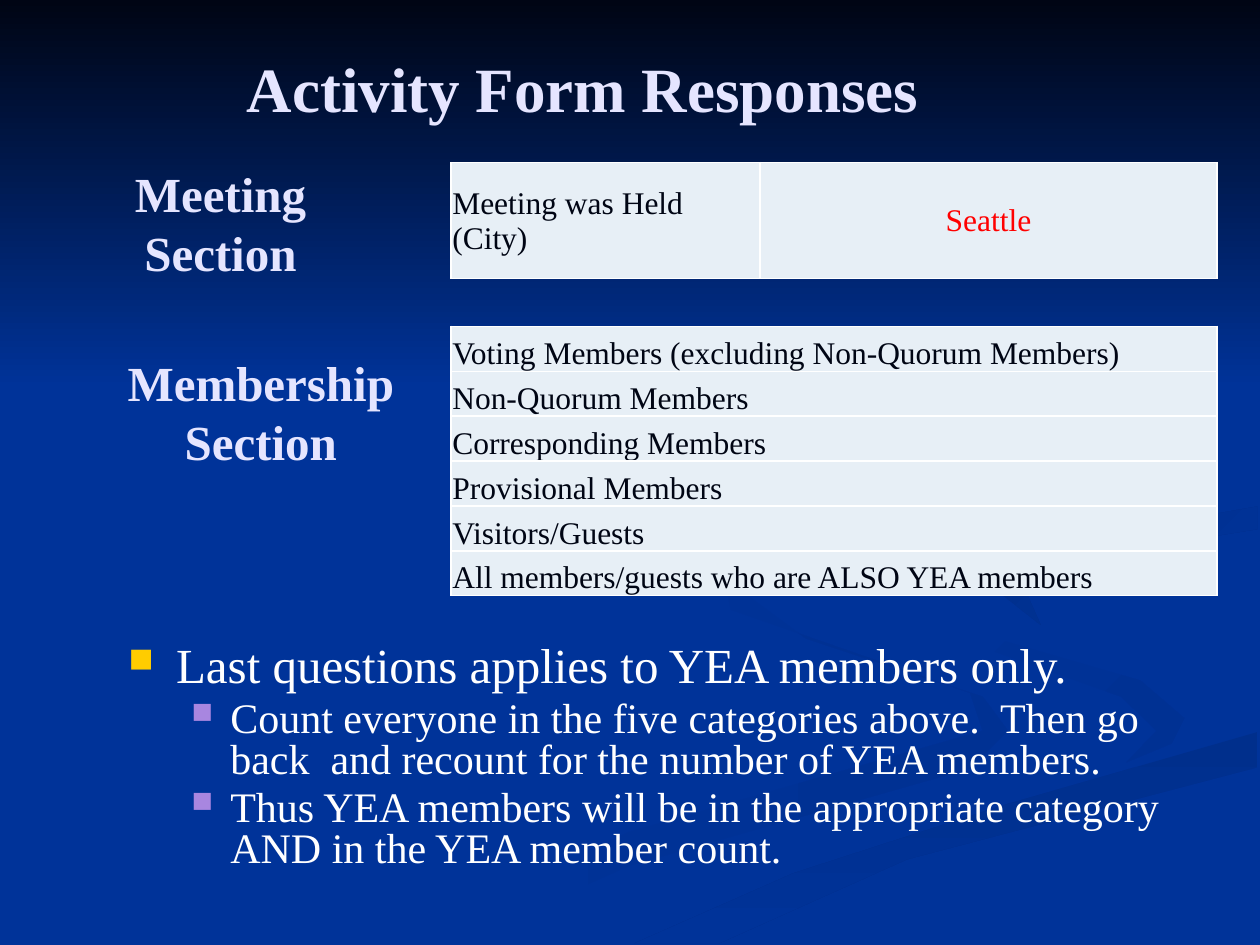
from dataclasses import dataclass

from lxml.etree import SubElement
from pptx import Presentation
from pptx.dml.color import RGBColor
from pptx.enum.shapes import MSO_SHAPE
from pptx.enum.text import MSO_ANCHOR, PP_ALIGN
from pptx.oxml import parse_xml
from pptx.oxml.ns import nsdecls, qn
from pptx.util import Inches, Pt

FONT = "Times New Roman"
COLORS = {
    "blue": "003399", "night": "000514", "deep": "002F8C", "dusk": "003193",
    "title": "E5E5FF", "white": "FFFFFF", "red": "FF0000",
    "cell": "E7EFF6", "gold": "FFCC00", "violet": "A886E0",
}


@dataclass
class Swirl:
    start: str
    end: str
    angle: int
    points: list[tuple[float, float]]


@dataclass
class Heading:
    text: str
    box: tuple[float, float, float, float]
    size: int
    anchor: MSO_ANCHOR


@dataclass
class Level:
    size: int
    color: str
    left: float
    hang: float


@dataclass
class Grid:
    top: float
    height: float
    widths: list[float]
    rows: list[list[str]]
    anchor: MSO_ANCHOR


SWIRLS = [
    Swirl("blue", "dusk", 0, [
        (7.8, 5.53), (6.4, 5.07), (5.75, 4.59), (5.8, 4.84), (7.7, 5.5),
        (7.8, 5.8), (5, 6.6), (3, 7.49), (3.6, 7.49), (5, 6.87), (7.7, 6.1),
        (8, 5.8)]),
    Swirl("blue", "dusk", 315, [
        (9.4, 5.7), (9.05, 5.4), (7.6, 4.98), (7.24, 4.64), (7.55, 5.05),
        (8.9, 5.53), (9.18, 5.8), (8.94, 6.05), (9.3, 5.9)]),
    Swirl("deep", "blue", 270, [
        (5.03, 7.49), (5.7, 7.49), (7.2, 6.82), (9.98, 6.09), (9.98, 5.81),
        (8, 6.38), (6.3, 6.93)]),
    Swirl("deep", "blue", 315, [
        (7.8, 4.6), (8.26, 4.96), (8.1, 4.6), (8.8, 4.39), (9.98, 4.2),
        (9.98, 4.02), (8.35, 4.3)]),
]
HEADINGS = [
    Heading("Activity Form Responses", (0.5, 0.3, 8.25, 0.78), 36, MSO_ANCHOR.MIDDLE),
    Heading("Membership Section", (0.75, 2.75, 2.64, 1.04), 28, MSO_ANCHOR.TOP),
    Heading("Meeting Section", (0.75, 1.25, 2, 1.04), 28, MSO_ANCHOR.TOP),
]
LEVELS = [Level(28, "gold", 0.38, 0.38), Level(24, "violet", 0.81, 0.31)]
BULLETS = [
    (0, "Last questions applies to YEA members only."),
    (1, "Count everyone in the five categories above.  Then go back  and recount "
        "for the number of YEA members."),
    (1, "Thus YEA members will be in the appropriate category AND in the YEA "
        "member count."),
]
GRIDS = [
    Grid(1.29, 0.92, [2.45, 3.63], [["Meeting was Held (City)", "Seattle"]],
         MSO_ANCHOR.MIDDLE),
    Grid(2.59, 2.14, [6.08], [
        ["Voting Members (excluding Non-Quorum Members)"], ["Non-Quorum Members"],
        ["Corresponding Members"], ["Provisional Members"], ["Visitors/Guests"],
        ["All members/guests who are ALSO YEA members"]], MSO_ANCHOR.BOTTOM),
]


def rgb(name: str) -> RGBColor:
    return RGBColor.from_string(COLORS[name])


def style(p, size: int, color: str, bold: bool = False) -> None:
    for r in p.runs:
        r.font.name, r.font.size, r.font.bold = FONT, Pt(size), bold
        r.font.color.rgb = rgb(color)


def shade(sp, start: str, end: str, angle: int) -> None:
    sp.shadow.inherit = False
    sp.line.fill.background()
    sp.fill.gradient()
    sp.fill.gradient_angle = angle
    for place, (stop, name) in enumerate(zip(sp.fill.gradient_stops, (start, end))):
        stop.color.rgb = rgb(name)
        stop.position = place


def add_swirl(s, swirl: Swirl) -> None:
    points = [(Inches(x), Inches(y)) for x, y in swirl.points]
    fb = s.shapes.build_freeform(*points[0])
    fb.add_line_segments(points[1:], close=True)
    shade(fb.convert_to_shape(), swirl.start, swirl.end, swirl.angle)


def add_sky(s, width: float, height: float) -> None:
    sp = s.shapes.add_shape(MSO_SHAPE.RECTANGLE, 0, 0, Inches(width), Inches(height))
    shade(sp, "night", "blue", 270)


def add_text_frame(s, box: tuple[float, float, float, float]):
    tf = s.shapes.add_textbox(*map(Inches, box)).text_frame
    tf.word_wrap = True
    return tf


def add_heading(s, heading: Heading) -> None:
    tf = add_text_frame(s, heading.box)
    tf.vertical_anchor = heading.anchor
    tf.text = heading.text
    p = tf.paragraphs[0]
    p.alignment = PP_ALIGN.CENTER
    style(p, heading.size, "title", True)


def add_bullets(s, bullets: list[tuple[int, str]]) -> None:
    tf = add_text_frame(s, (0.92, 5.08, 8.5, 2))
    for i, (depth, text) in enumerate(bullets):
        level = LEVELS[depth]
        p = tf.add_paragraph() if i else tf.paragraphs[0]
        p.text, p.level = text, depth
        p.line_spacing, p.space_before = 0.8, Pt(level.size * 0.2)
        style(p, level.size, "white")
        pPr = p._p.get_or_add_pPr()
        pPr.set("marL", str(Inches(level.left)))
        pPr.set("indent", str(-Inches(level.hang)))
        clr = SubElement(pPr, qn("a:buClr"))
        SubElement(clr, qn("a:srgbClr"), val=COLORS[level.color])
        SubElement(pPr, qn("a:buSzPct"), val="70000")
        SubElement(pPr, qn("a:buChar"), char="■")


def add_borders(cell) -> None:
    tcPr = cell._tc.get_or_add_tcPr()
    for i, side in enumerate("LRTB"):
        tcPr.insert(i, parse_xml(
            f'<a:ln{side} {nsdecls("a")} w="{Pt(1)}"><a:solidFill>'
            f'<a:srgbClr val="{COLORS["white"]}"/></a:solidFill></a:ln{side}>'))


def add_grid(s, grid: Grid) -> None:
    table = s.shapes.add_table(
        len(grid.rows), len(grid.widths), Inches(3.58), Inches(grid.top),
        Inches(sum(grid.widths)), Inches(grid.height)).table
    table.first_row = table.horz_banding = False
    for column, width in zip(table.columns, grid.widths):
        column.width = Inches(width)
    for i, row in enumerate(grid.rows):
        for j, text in enumerate(row):
            cell = table.cell(i, j)
            cell.text = text
            cell.vertical_anchor = grid.anchor
            cell.margin_left = cell.margin_right = cell.margin_top = Inches(0.01)
            cell.margin_bottom = 0
            cell.fill.solid()
            cell.fill.fore_color.rgb = rgb("cell")
            add_borders(cell)
            p = cell.text_frame.paragraphs[0]
            style(p, 18, "red" if j else "night")
            if j:
                p.alignment = PP_ALIGN.CENTER


def main() -> None:
    prs = Presentation()
    prs.slide_width, prs.slide_height = Inches(10), Inches(7.5)
    s = prs.slides.add_slide(prs.slide_layouts[6])
    s.background.fill.solid()
    s.background.fill.fore_color.rgb = rgb("blue")
    for swirl in SWIRLS:
        add_swirl(s, swirl)
    add_sky(s, 10, 3.08)
    for grid in GRIDS:
        add_grid(s, grid)
    for heading in HEADINGS:
        add_heading(s, heading)
    add_bullets(s, BULLETS)
    prs.save("out.pptx")


if __name__ == "__main__":
    main()
